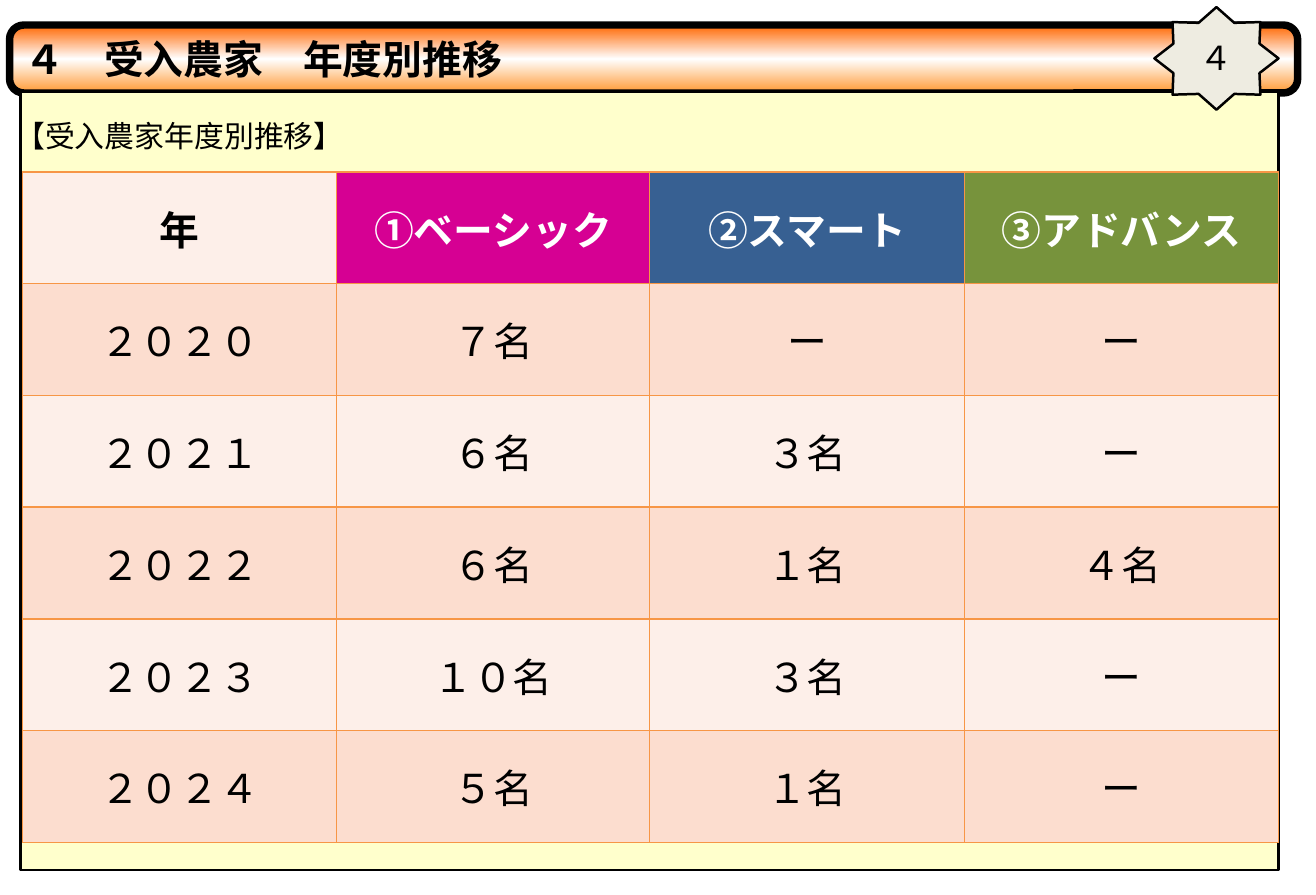
from lxml.etree import SubElement
from copy import deepcopy
from pptx import Presentation
from pptx.dml.color import RGBColor
from pptx.enum.shapes import MSO_SHAPE
from pptx.enum.text import MSO_ANCHOR, PP_ALIGN
from pptx.oxml import parse_xml
from pptx.oxml.ns import nsdecls, qn
from pptx.util import Cm, Inches, Pt

COLORS = {
    "black": "000000", "white": "FFFFFF", "panel": "FFFFCC", "star": "EEECE1",
    "border": "F79646", "band_light": "FDEFE9", "band_dark": "FCDDCF",
    "basic": "D60093", "smart": "376092", "advance": "77933C",
    "title_top": "FF6600", "title_bottom": "FF9933",
}
JP_FONT = "Noto Sans CJK JP"
HEADERS = [("年", "black", "band_light"), ("①ベーシック", "white", "basic"),
           ("②スマート", "white", "smart"), ("③アドバンス", "white", "advance")]
YEARS = [
    ("２０２０", "７名", "ー", "ー"),
    ("２０２１", "６名", "３名", "ー"),
    ("２０２２", "６名", "１名", "４名"),
    ("２０２３", "１０名", "３名", "ー"),
    ("２０２４", "５名", "１名", "ー"),
]
COLUMN_WIDTHS = [2.63, 2.62, 2.64, 2.63]
ROW_HEIGHT = 5.62 / 6


def rgb(name):
    return RGBColor.from_string(COLORS[name])


def write(tf, text, size, font=JP_FONT, color="black", bold=False, align=PP_ALIGN.LEFT):
    p = tf.paragraphs[0]
    p.text = text
    p.alignment = align
    p.font.size = Pt(size)
    p.font.bold = bold
    p.font.color.rgb = rgb(color)
    p.font.name = font
    SubElement(p.font._element, qn("a:ea")).set("typeface", JP_FONT)


def add_box(slide, kind, box, line_width, fill=None):
    sp = slide.shapes.add_shape(kind, *map(Inches, box))
    sp.shadow.inherit = False
    sp.line.color.rgb = rgb("black")
    sp.line.width = Pt(line_width)
    if fill:
        sp.fill.solid()
        sp.fill.fore_color.rgb = rgb(fill)
    sp.text_frame.vertical_anchor = MSO_ANCHOR.MIDDLE
    return sp


def fill_title_gradient(sp):
    sp.fill.gradient()
    sp.fill.gradient_angle = 270
    first = sp.fill.gradient_stops[0]._gs
    first.addnext(deepcopy(first))
    for stop, (position, color) in zip(
            sp.fill.gradient_stops,
            [(0, "title_top"), (0.5, "white"), (1, "title_bottom")]):
        stop.position = position
        stop.color.rgb = rgb(color)


def add_title(slide):
    sp = add_box(slide, MSO_SHAPE.ROUNDED_RECTANGLE, (0.08, 0.21, 10.79, 0.57), 4.5)
    sp.adjustments[0] = 0.21
    fill_title_gradient(sp)
    tf = sp.text_frame
    tf.margin_left = tf.margin_right = Inches(0.09)
    write(tf, "４　受入農家　年度別推移", 24, "Arial", bold=True)


def add_caption(slide):
    tf = slide.shapes.add_textbox(*map(Inches, (0.03, 0.94, 4.54, 0.39))).text_frame
    tf.word_wrap = True
    tf.vertical_anchor = MSO_ANCHOR.MIDDLE
    write(tf, "【受入農家年度別推移】", 18)


def set_cell(cell, text, fill, **style):
    cell.fill.solid()
    cell.fill.fore_color.rgb = rgb(fill)
    cell.vertical_anchor = MSO_ANCHOR.MIDDLE
    write(cell.text_frame, text, 24, align=PP_ALIGN.CENTER, **style)
    for i, side in enumerate(("lnL", "lnR", "lnT", "lnB")):
        cell._tc.tcPr.insert(i, parse_xml(
            f'<a:{side} {nsdecls("a")} w="{Pt(1)}"><a:solidFill>'
            f'<a:srgbClr val="{COLORS["border"]}"/></a:solidFill></a:{side}>'))


def add_farm_table(slide):
    table = slide.shapes.add_table(
        len(YEARS) + 1, len(HEADERS), Inches(0.19), Inches(1.44),
        Inches(sum(COLUMN_WIDTHS)), Inches(5.62)).table
    for column, width in zip(table.columns, COLUMN_WIDTHS):
        column.width = Inches(width)
    for row in table.rows:
        row.height = Inches(ROW_HEIGHT)
    for c, (text, color, fill) in enumerate(HEADERS):
        set_cell(table.cell(0, c), text, fill, color=color, bold=True)
    for r, values in enumerate(YEARS, 1):
        band = "band_dark" if r % 2 else "band_light"
        for c, text in enumerate(values):
            set_cell(table.cell(r, c), text, band, font="Arial")


def add_page_star(slide):
    sp = add_box(slide, MSO_SHAPE.STAR_8_POINT, (9.67, 0.06, 1.04, 0.86), 1.5, "star")
    tf = sp.text_frame
    tf.margin_top, tf.margin_bottom = Inches(0.06), Inches(0.08)
    write(tf, "４", 20, "Calibri", align=PP_ALIGN.CENTER)


def main():
    prs = Presentation()
    prs.slide_width, prs.slide_height = Cm(28), Inches(7.5)
    slide = prs.slides.add_slide(prs.slide_layouts[6])
    add_title(slide)
    add_box(slide, MSO_SHAPE.RECTANGLE, (0.17, 0.77, 10.54, 6.52), 1.5, "panel")
    add_caption(slide)
    add_farm_table(slide)
    add_page_star(slide)
    prs.save("out.pptx")


if __name__ == "__main__":
    main()
